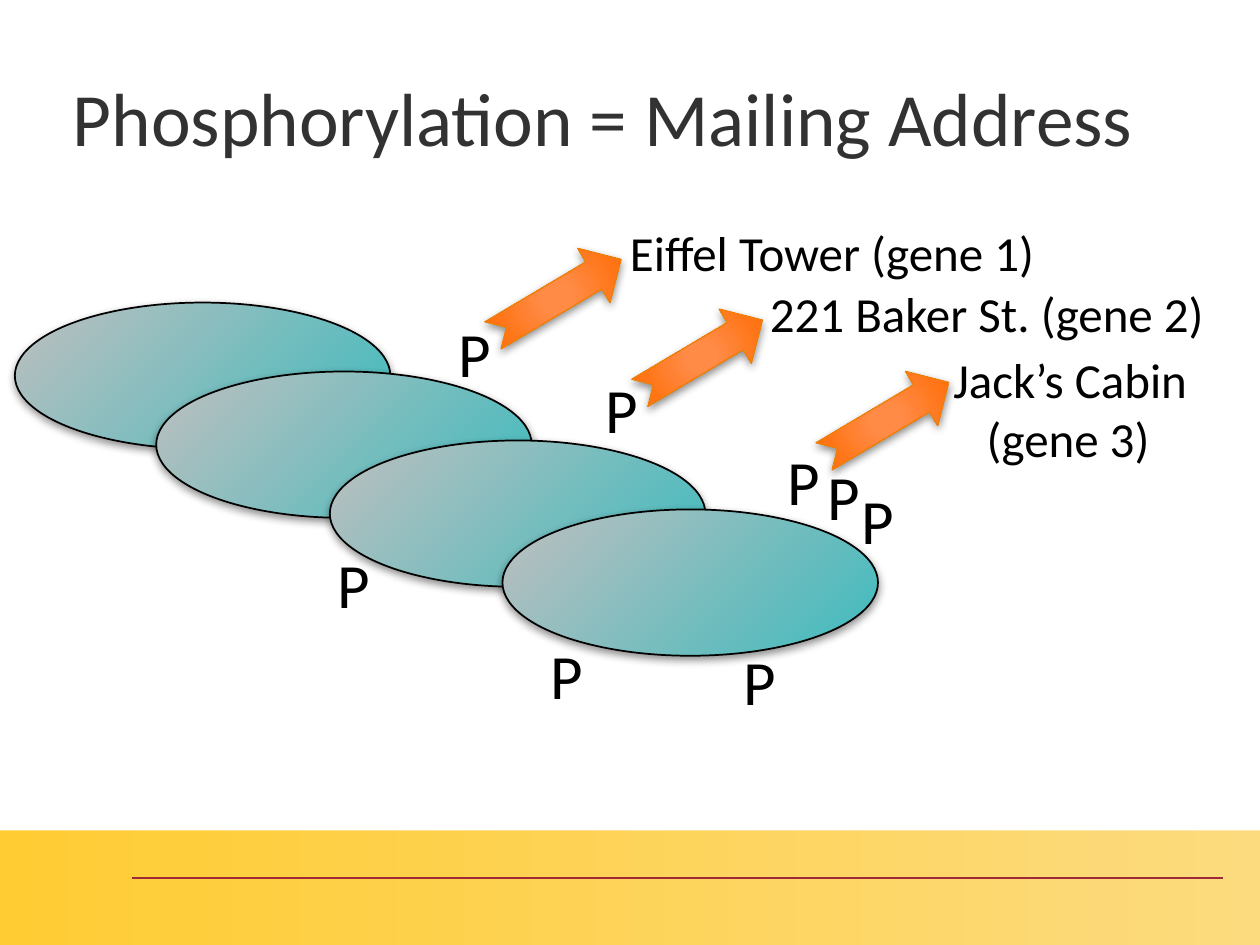
"""Build the slide on phosphorylation as a mailing address."""
from lxml import etree
from pptx import Presentation
from pptx.dml.color import RGBColor
from pptx.enum.shapes import MSO_CONNECTOR, MSO_SHAPE
from pptx.enum.text import MSO_ANCHOR
from pptx.oxml import parse_xml
from pptx.oxml.ns import nsdecls, qn
from pptx.util import Cm, Pt

OVAL, ARROW, RECT = MSO_SHAPE.OVAL, MSO_SHAPE.NOTCHED_RIGHT_ARROW, MSO_SHAPE.RECTANGLE
STRAIGHT = MSO_CONNECTOR.STRAIGHT
TOP, MIDDLE = MSO_ANCHOR.TOP, MSO_ANCHOR.MIDDLE

BLACK = RGBColor(0x00, 0x00, 0x00)
WHITE = RGBColor(0xFF, 0xFF, 0xFF)
CHARCOAL = RGBColor(0x32, 0x32, 0x32)
CRIMSON = RGBColor(0x9F, 0x29, 0x36)
ORANGE = RGBColor(0xF0, 0x7F, 0x09)
PALE_GOLD = RGBColor(0xFC, 0xDB, 0x7E)
GOLD = RGBColor(0xFF, 0xCC, 0x33)
OVAL_STOPS = [(0, RGBColor(0x3E, 0xBB, 0xBE)), (100, RGBColor(0xBF, 0xBF, 0xBF))]
ARROW_STOPS = [
    (0, RGBColor(0xFF, 0x8C, 0x47)),
    (15, RGBColor(0xFF, 0x8B, 0x46)),
    (62, RGBColor(0xFF, 0x74, 0x15)),
    (97, RGBColor(0xEB, 0x66, 0x00)),
    (100, RGBColor(0xCA, 0x67, 0x00)),
]


def add_text(text, x, y, w, h, size=28, color=BLACK, anchor=TOP, indent=0):
    tf = s.shapes.add_textbox(Cm(x), Cm(y), Cm(w), Cm(h)).text_frame
    tf.word_wrap = True
    tf.vertical_anchor = anchor
    for i, line in enumerate(text.split("\n")):
        p = tf.paragraphs[0] if i == 0 else tf.add_paragraph()
        if i and indent:
            p._p.get_or_add_pPr().set("marL", str(Cm(indent)))
        r = p.add_run()
        r.text = line
        r.font.name = "Calibri"
        r.font.size = Pt(size)
        r.font.color.rgb = color


def add_glossy(kind, x, y, w, h, stops, focus, line, width):
    sp = s.shapes.add_shape(kind, Cm(x), Cm(y), Cm(w), Cm(h))
    sp.line.color.rgb = line
    sp.line.width = Pt(width)
    gs = "".join(
        f'<a:gs pos="{pos * 1000}"><a:srgbClr val="{color}"/></a:gs>' for pos, color in stops
    )
    left, top, right, bottom = (edge * 1000 for edge in focus)
    spPr = sp._element.spPr
    spPr.insert(2, parse_xml(
        f'<a:gradFill {nsdecls("a")} rotWithShape="1"><a:gsLst>{gs}</a:gsLst>'
        f'<a:path path="circle"><a:fillToRect l="{left}" t="{top}" r="{right}" b="{bottom}"/>'
        f'</a:path></a:gradFill>'
    ))
    spPr.append(parse_xml(
        f'<a:effectLst {nsdecls("a")}><a:outerShdw blurRad="{Pt(5)}" dist="{Pt(2)}" '
        f'dir="5400000" rotWithShape="0"><a:srgbClr val="{BLACK}"><a:alpha val="43000"/>'
        f'</a:srgbClr></a:outerShdw></a:effectLst>'
    ))
    return sp


prs = Presentation()
prs.slide_width, prs.slide_height = Cm(25.4), Cm(19.05)
s = prs.slides.add_slide(prs.slide_layouts[6])

fill = s.background.fill
fill.gradient()
fill.gradient_angle = 180
for stop, color in zip(fill.gradient_stops, (PALE_GOLD, GOLD)):
    stop.color.rgb = color

panel = s.shapes.add_shape(RECT, 0, 0, prs.slide_width, Cm(16.74))
panel.shadow.inherit = False
panel.fill.solid()
panel.fill.fore_color.rgb = WHITE
panel.line.fill.background()

rule = s.shapes.add_connector(STRAIGHT, Cm(2.67), Cm(17.7), Cm(24.66), Cm(17.7))
rule.line.color.rgb = CRIMSON
rule.line.width = Pt(1)
etree.SubElement(rule._element.spPr, qn("a:effectLst"))

add_text("Phosphorylation = Mailing Address", 1.22, 0.76, 24.18, 3.18,
         size=43, color=CHARCOAL, anchor=MIDDLE)

for i, x in enumerate((0.3, 3.15, 6.65, 10.13)):
    add_glossy(OVAL, x, 6.1 + 1.39 * i, 7.57, 2.95, OVAL_STOPS, (100, 100, 0, 0), BLACK, 1)

phosphates = [
    (8.99, 6.22), (11.96, 7.34), (6.55, 10.87), (15.62, 8.79),
    (16.43, 9.09), (17.12, 9.58), (10.85, 12.7), (14.73, 12.83),
]
for x, y in phosphates:
    add_text("P", x, y, 1.17, 1.8, size=36)

for x, y, w in ((9.73, 5.36, 3), (12.7, 6.55, 2.87), (16.41, 7.82, 2.92)):
    sp = add_glossy(ARROW, x, y, w, 1.27, ARROW_STOPS, (50, 50, 50, 50), ORANGE, 0.75)
    sp.rotation = 329.3

add_text("Eiffel Tower (gene 1)", 12.45, 4.37, 8.71, 1.45)
add_text("221 Baker St. (gene 2)", 15.27, 5.59, 9.4, 1.45)
add_text("Jack’s Cabin\n(gene 3)", 18.97, 6.93, 5.31, 2.64, indent=0.67)

prs.save("out.pptx")
